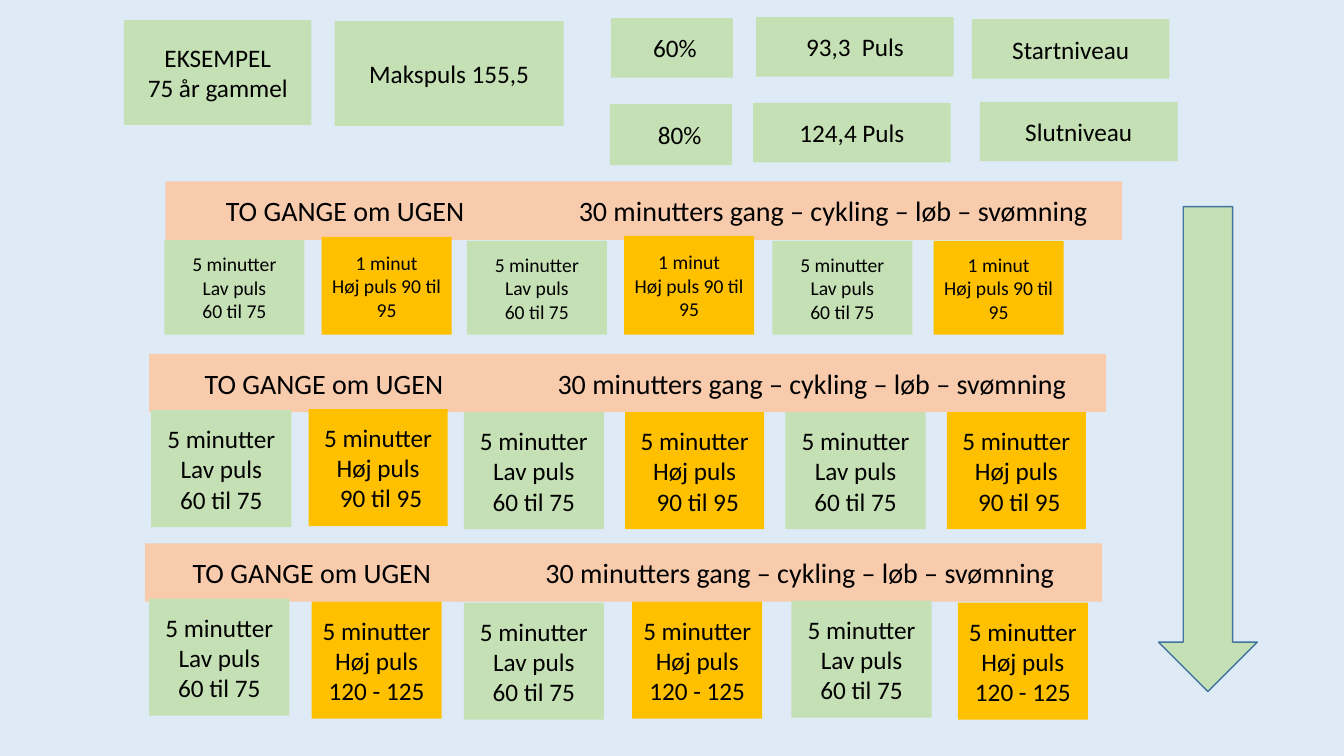
from pptx import Presentation
from pptx.dml.color import RGBColor
from pptx.enum import shapes, text
from pptx.oxml import parse_xml
from pptx.oxml.ns import nsdecls
from pptx.util import Inches, Pt

BACKGROUND = RGBColor(0xDE, 0xEB, 0xF7)
GREEN = RGBColor(0xC5, 0xE0, 0xB4)
ORANGE = RGBColor(0xFF, 0xC0, 0x00)
PEACH = RGBColor(0xF8, 0xCB, 0xAD)
OUTLINE = RGBColor(0x43, 0x73, 0x9E)
BLACK = RGBColor(0, 0, 0)

presentation = Presentation()
presentation.slide_width = Inches(13.33)
presentation.slide_height = Inches(7.5)
slide = presentation.slides.add_slide(presentation.slide_layouts[6])
slide.background.fill.solid()
slide.background.fill.fore_color.rgb = BACKGROUND


def add_filled(kind, left, top, width, height, color):
    shape = slide.shapes.add_shape(
        kind, Inches(left), Inches(top), Inches(width), Inches(height))
    shape.shadow.inherit = False
    shape.fill.solid()
    shape.fill.fore_color.rgb = color
    shape.line.fill.background()
    return shape


def add_box(left, top, width, height, color, lines, size=18, align=text.PP_ALIGN.CENTER):
    """Add a rectangle; each line is a pair of wording and first-line indent in inches."""
    shape = add_filled(shapes.MSO_SHAPE.RECTANGLE, left, top, width, height, color)
    frame = shape.text_frame
    frame.word_wrap = True
    frame.vertical_anchor = text.MSO_ANCHOR.MIDDLE
    for index, (wording, indent) in enumerate(lines):
        paragraph = frame.add_paragraph() if index else frame.paragraphs[0]
        paragraph.text = wording
        paragraph.alignment = align
        paragraph.font.name = "Calibri"
        paragraph.font.size = Pt(size)
        paragraph.font.color.rgb = BLACK
        if indent:
            properties = paragraph._p.get_or_add_pPr()
            properties.set("marL", "0")
            properties.set("indent", str(Inches(indent)))
    return shape


# Pulse facts along the top
facts = [
    (1.23, 0.2, 1.86, 1.04, [("EKSEMPEL", 0), ("75 år gammel", -0.06)]),
    (3.32, 0.21, 2.27, 1.04, [("Makspuls 155,5", -0.06)]),
    (6.06, 0.18, 1.21, 0.59, [("60%", 0.06)]),
    (6.05, 1.03, 1.21, 0.61, [("80%", 0.17)]),
    (7.5, 0.17, 1.96, 0.59, [("93,3  Puls", 0)]),
    (7.47, 1.02, 1.96, 0.59, [("124,4 Puls", -0.06)]),
    (9.64, 0.19, 1.96, 0.59, [("Startniveau", -0.06)]),
    (9.72, 1.01, 1.96, 0.59, [("Slutniveau", 0)]),
]
for left, top, width, height, lines in facts:
    add_box(left, top, width, height, GREEN, lines)

# Training levels: banner left, top and text inset, high-pulse lines, high-pulse width,
# text size, bottom of the intervals (None: fixed height), interval left and top
INTERVAL_HEIGHT = 1.16
levels = [
    (1.64, 1.8, 0.6, [("1 minut", 0), ("Høj puls 90 til 95", 0)], 1.29, 14, 3.32,
     [(1.63, 2.38), (3.19, 2.35), (4.63, 2.39), (6.19, 2.34), (7.66, 2.39), (9.26, 2.39)]),
    (1.48, 3.51, 0.55, [("5 minutter", 0), ("Høj puls", 0), ("90 til 95", 0.06)], 1.38, 18, None,
     [(1.5, 4.07), (3.06, 4.06), (4.6, 4.09), (6.2, 4.09), (7.79, 4.09), (9.39, 4.09)]),
    (1.44, 5.39, 0.47, [("5 minutter", 0), ("Høj puls 120 - 125", 0)], 1.29, 18, None,
     [(1.48, 5.94), (3.09, 5.97), (4.6, 5.98), (6.27, 5.97), (7.85, 5.96), (9.5, 5.98)]),
]
centred_low_pulse = [(1.63, 2.38), (4.6, 5.98)]

for left, top, inset, high_lines, high_width, size, bottom, places in levels:
    banner = add_box(
        left, top, 9.49, 0.58, PEACH,
        [("TO GANGE om UGEN\t30 minutters gang – cykling – løb – svømning", 0)],
        size=20, align=text.PP_ALIGN.LEFT)
    banner.text_frame.margin_left = Inches(inset)
    tab_stops = parse_xml(
        f'<a:tabLst {nsdecls("a")}><a:tab pos="{Inches(3.5)}" algn="l"/></a:tabLst>')
    banner.text_frame.paragraphs[0]._p.get_or_add_pPr().insert(0, tab_stops)

    for index, place in enumerate(places):
        height = bottom - place[1] if bottom else INTERVAL_HEIGHT
        if index % 2:
            add_box(*place, high_width, height, ORANGE, high_lines, size)
        else:
            indent = 0 if place in centred_low_pulse else -0.006 * size
            low_lines = [("5 minutter", 0), ("Lav puls", 0), ("60 til 75", indent)]
            add_box(*place, 1.39, height, GREEN, low_lines, size)

arrow = add_filled(shapes.MSO_SHAPE.DOWN_ARROW, 11.49, 2.05, 0.98, 4.81, GREEN)
arrow.line.color.rgb = OUTLINE
arrow.line.width = Pt(1)

presentation.save("out.pptx")
